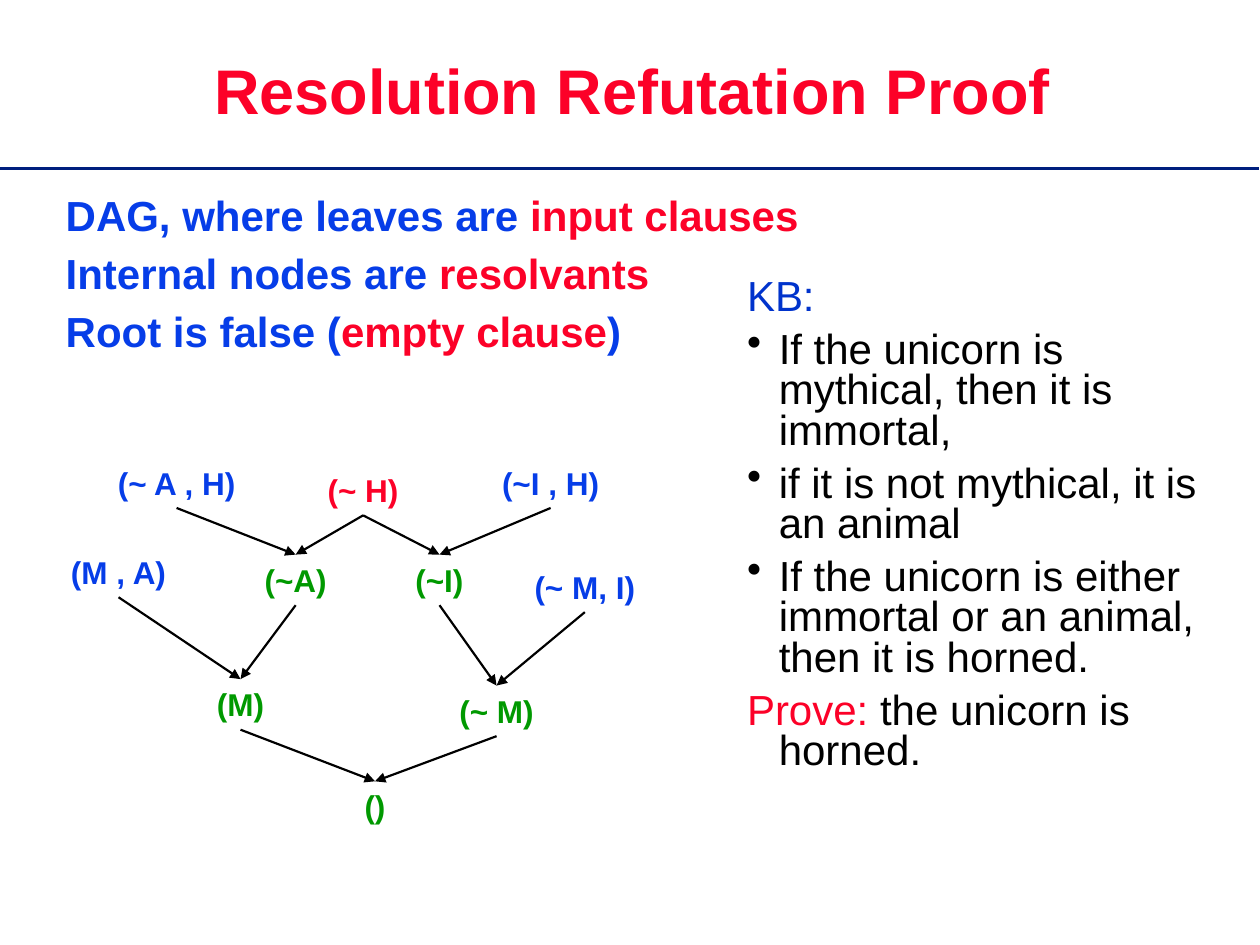
from dataclasses import dataclass

from lxml import etree
from pptx import Presentation
from pptx.dml.color import RGBColor
from pptx.enum.shapes import MSO_CONNECTOR
from pptx.enum.text import MSO_ANCHOR, MSO_AUTO_SIZE, PP_ALIGN
from pptx.oxml.ns import qn
from pptx.util import Cm, Pt

STRAIGHT = MSO_CONNECTOR.STRAIGHT
CENTER, LEFT = PP_ALIGN.CENTER, PP_ALIGN.LEFT
MIDDLE, TOP = MSO_ANCHOR.MIDDLE, MSO_ANCHOR.TOP
NO_FIT = MSO_AUTO_SIZE.NONE

RED = RGBColor(0xFC, 0x01, 0x28)
BLUE = RGBColor(0x06, 0x3D, 0xE8)
KB_BLUE = RGBColor(0x00, 0x33, 0xCC)
NAVY = RGBColor(0x00, 0x1F, 0x7E)
GREEN = RGBColor(0x00, 0x99, 0x00)
BLACK = RGBColor(0, 0, 0)

FONT = "Arial"
NODE_HEIGHT = 1.02
INDENT = Cm(0.64)


@dataclass
class Clause:
    """A node of the proof graph; centre, top and width in cm."""
    text: str
    color: RGBColor
    center: float
    top: float
    width: float


@dataclass
class Line:
    """A paragraph made of (text, colour) spans."""
    spans: list[tuple[str, RGBColor]]
    bullet: bool = False


CLAUSES = {
    "not_a_or_h": Clause("(~ A , H)", BLUE, 3.56, 9.22, 2.9),
    "m_or_a": Clause("(M , A)", BLUE, 2.39, 11.02, 2.44),
    "not_h": Clause("(~ H)", RED, 7.32, 9.37, 2.03),
    "not_i_or_h": Clause("(~I , H)", BLUE, 11.1, 9.22, 2.49),
    "not_m": Clause("(~ M)", GREEN, 10.01, 13.82, 2.08),
    "not_m_or_i": Clause("(~ M, I)", BLUE, 11.79, 11.32, 2.57),
    "not_i": Clause("(~I)", GREEN, 8.86, 11.18, 1.5),
    "not_a": Clause("(~A)", GREEN, 5.96, 11.18, 1.85),
    "m": Clause("(M)", GREEN, 4.85, 13.69, 1.47),
    "empty": Clause("()", GREEN, 7.56, 15.75, 0.94),
}

# Each resolvant with the two clauses it comes from
RESOLUTIONS = {
    "not_a": ("not_a_or_h", "not_h"),
    "not_i": ("not_h", "not_i_or_h"),
    "not_m": ("not_i", "not_m_or_i"),
    "m": ("m_or_a", "not_a"),
    "empty": ("not_m", "m"),
}

DAG_LINES = [
    Line([("DAG, where leaves are ", BLUE), ("input clauses", RED)]),
    Line([("Internal nodes are ", BLUE), ("resolvants", RED)]),
    Line([("Root is false (", BLUE), ("empty clause", RED), (")", BLUE)]),
]

KB_LINES = [
    Line([("KB:", KB_BLUE)]),
    Line([("If the unicorn is mythical, then it is immortal,", BLACK)], True),
    Line([("if it is not mythical, it is an animal", BLACK)], True),
    Line([("If the unicorn is either immortal or an animal, "
           "then it is horned.", BLACK)], True),
    Line([("Prove: ", RED), ("the unicorn is horned.", BLACK)]),
]


def place(shape, left: float, top: float, width: float, height: float) -> None:
    shape.left, shape.top = Cm(left), Cm(top)
    shape.width, shape.height = Cm(width), Cm(height)


def set_font(paragraph, size: int, bold: bool) -> None:
    font = paragraph.font
    font.name, font.size, font.bold = FONT, Pt(size), bold


def add_span(paragraph, text: str, color: RGBColor):
    span = paragraph.add_run()
    span.text = text
    span.font.color.rgb = color
    return span


def add_shadow(span) -> None:
    """Put a soft dark shadow behind the letters."""
    effects = etree.Element(qn("a:effectLst"))
    shadow = etree.SubElement(effects, qn("a:outerShdw"), blurRad="38100",
                              dist="38100", dir="2700000", algn="tl")
    color = etree.SubElement(shadow, qn("a:srgbClr"), val="000000")
    etree.SubElement(color, qn("a:alpha"), val="60000")
    span.font._element.find(qn("a:solidFill")).addnext(effects)


def write_lines(frame, lines: list[Line], bold: bool, spacing: float) -> None:
    frame.word_wrap = True
    frame.auto_size = NO_FIT
    frame.vertical_anchor = TOP
    for index, line in enumerate(lines):
        para = frame.add_paragraph() if index else frame.paragraphs[0]
        para.alignment = LEFT
        para.line_spacing = spacing
        para.space_before = Pt(7.2)
        set_font(para, 24, bold)
        props = para._p.get_or_add_pPr()
        props.set("marL", str(INDENT))
        props.set("indent", str(-INDENT))
        mark = etree.Element(qn("a:buChar" if line.bullet else "a:buNone"))
        if line.bullet:
            mark.set("char", "•")
        props.find(qn("a:defRPr")).addprevious(mark)
        for text, color in line.spans:
            add_span(para, text, color)


def add_line(page, start: tuple[float, float], end: tuple[float, float],
             color: RGBColor, width: float, arrow: bool = False) -> None:
    line = page.shapes.add_connector(
        STRAIGHT, Cm(start[0]), Cm(start[1]), Cm(end[0]), Cm(end[1]))
    line.line.color.rgb = color
    line.line.width = Pt(width)
    if arrow:
        etree.SubElement(line.line._get_or_add_ln(), qn("a:tailEnd"),
                         type="triangle")
    etree.SubElement(line._element.spPr, qn("a:effectLst"))


def add_clause(page, clause: Clause) -> None:
    box = page.shapes.add_textbox(
        Cm(clause.center - clause.width / 2), Cm(clause.top),
        Cm(clause.width), Cm(NODE_HEIGHT))
    box.text_frame.word_wrap = False
    para = box.text_frame.paragraphs[0]
    para.alignment = CENTER
    set_font(para, 18, True)
    add_span(para, clause.text, clause.color)


def add_arrow(page, parent: Clause, child: Clause) -> None:
    add_line(page, (parent.center, parent.top + NODE_HEIGHT),
             (child.center, child.top), BLACK, 1.25, arrow=True)


def main() -> None:
    deck = Presentation()
    deck.slide_width, deck.slide_height = Cm(25.4), Cm(19.05)
    page = deck.slides.add_slide(deck.slide_layouts[1])
    title, body = page.placeholders

    # Title and the rule under it
    place(title, 2.77, 0.64, 19.96, 2.51)
    title.text_frame.auto_size = NO_FIT
    title.text_frame.vertical_anchor = MIDDLE
    heading = title.text_frame.paragraphs[0]
    heading.alignment = CENTER
    heading.line_spacing = 0.9
    set_font(heading, 36, True)
    add_shadow(add_span(heading, "Resolution Refutation Proof", RED))
    add_line(page, (0, 3.4), (25.37, 3.4), NAVY, 2)

    # Description of the graph
    place(body, 1.07, 3.81, 19.89, 11.43)
    write_lines(body.text_frame, DAG_LINES, True, 0.9)

    # Proof graph
    for clause in CLAUSES.values():
        add_clause(page, clause)
    for child, parents in RESOLUTIONS.items():
        for parent in parents:
            add_arrow(page, CLAUSES[parent], CLAUSES[child])

    # Knowledge base and goal
    knowledge = page.shapes.add_textbox(Cm(14.81), Cm(5.51), Cm(9.73), Cm(12.5))
    write_lines(knowledge.text_frame, KB_LINES, False, 0.8)

    deck.save("out.pptx")


if __name__ == "__main__":
    main()
